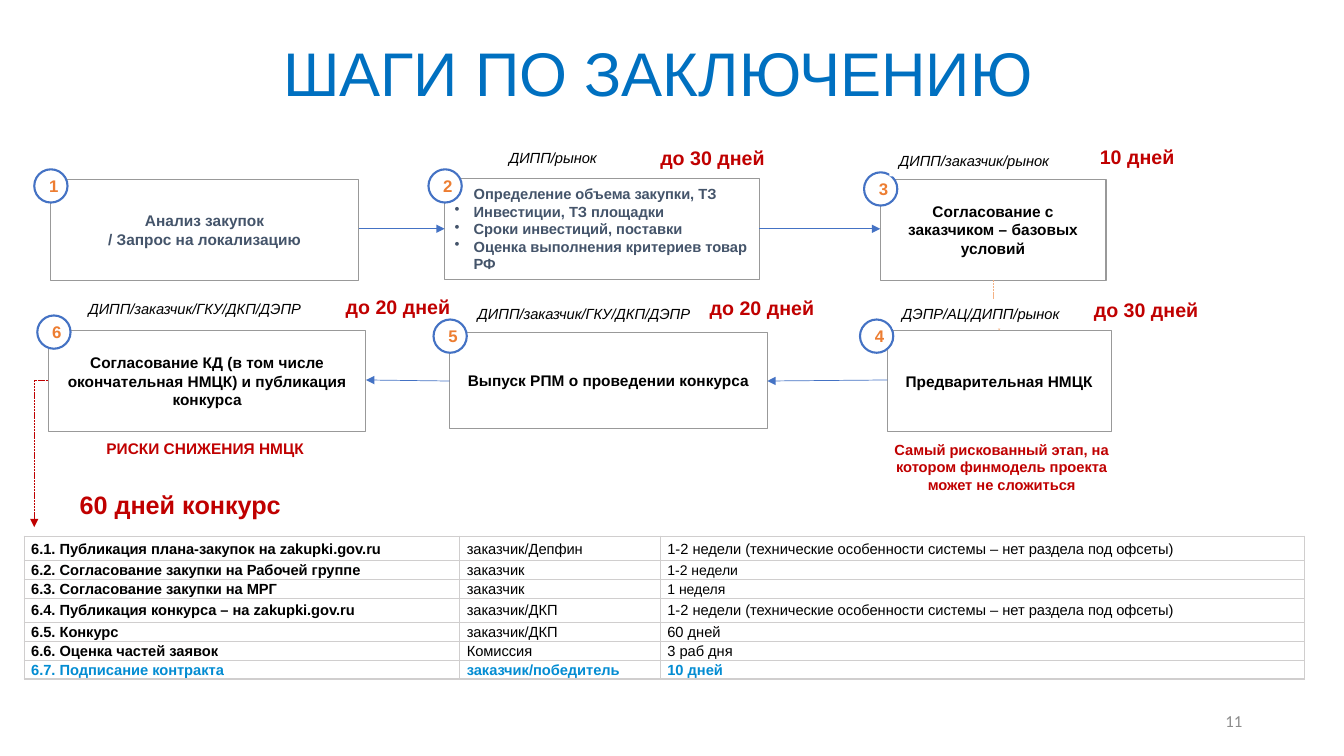
from pptx import Presentation, util as u
from pptx.dml.color import RGBColor
from pptx.enum import dml, shapes, text
from pptx.oxml import parse_xml
from pptx.oxml.ns import nsdecls, qn

HUE = {"white": "FFFFFF", "black": "000000", "slate": "44546A", "edge": "999999",
       "blue": "4472C4", "amber": "ED7D31", "peach": "F4B183", "red": "C00000",
       "title": "0070C0", "sky": "038CD2", "grid": "D0CECE", "page": "8C8C8C"}

# Steps: number, box, circle corner, lines, size, colour
STEPS = [
    (1, (0.5, 1.78, 3.06, 1), (0.34, 1.68),
     ["Анализ закупок", "/ Запрос на локализацию"], 11, "slate"),
    (2, (4.41, 1.77, 3.12, 1), (4.25, 1.68),
     ["Определение объема закупки, ТЗ", "Инвестиции, ТЗ площадки",
      "Сроки инвестиций, поставки", "Оценка выполнения критериев товар РФ"],
     10.5, "slate"),
    (3, (8.73, 1.78, 2.24, 1), (8.57, 1.71),
     ["Согласование с заказчиком – базовых условий"], 11, "black"),
    (4, (8.8, 3.28, 2.22, 1), (8.53, 3.17), ["Предварительная НМЦК"], 11, "black"),
    (5, (4.46, 3.3, 3.15, 0.95), (4.3, 3.17),
     ["Выпуск РПМ о проведении конкурса"], 11, "black"),
    (6, (0.48, 3.28, 3.15, 1), (0.37, 3.13),
     ["Согласование КД (в том числе окончательная НМЦК) и публикация конкурса"],
     11, "black"),
]
BULLETED = 2

# Straight arrows: from, to, width
ARROWS = [
    ((3.56, 2.27), (4.41, 2.27), 1),
    ((7.53, 2.27), (8.73, 2.27), 0.5),
    ((8.8, 3.77), (7.61, 3.78), 0.5),
    ((4.46, 3.78), (3.63, 3.77), 0.5),
]

# Who is in charge: left, top, width, wording
OWNERS = [
    (4.95, 1.43, 2.51, "ДИПП/рынок"),
    (8.82, 1.46, 2.51, "ДИПП/заказчик/рынок"),
    (8.85, 2.97, 2.51, "ДЭПР/АЦ/ДИПП/рынок"),
    (4.64, 2.97, 2.87, "ДИПП/заказчик/ГКУ/ДКП/ДЭПР"),
    (0.78, 2.93, 2.87, "ДИПП/заказчик/ГКУ/ДКП/ДЭПР"),
]

# Red notes: box, wording, size, centred
TERMS = [
    ((0.69, 4.81, 2.32, 0.4), "60 дней конкурс", 18, False),
    ((6.45, 1.4, 2.32, 0.34), "до 30 дней", 14, False),
    ((10.81, 1.39, 2.32, 0.34), "10 дней", 14, False),
    ((10.75, 2.91, 2.32, 0.34), "до 30 дней", 14, False),
    ((6.94, 2.89, 2.32, 0.34), "до 20 дней", 14, False),
    ((3.33, 2.88, 2.32, 0.34), "до 20 дней", 14, False),
    ((8.64, 4.32, 2.59, 0.63),
     "Самый рискованный этап, на котором финмодель проекта может не сложиться",
     10.5, True),
    ((0.74, 4.31, 2.59, 0.29), "РИСКИ СНИЖЕНИЯ НМЦК", 11, True),
]

LONG = "1-2 недели (технические особенности системы – нет раздела под офсеты)"
ROWS = [
    ("6.1. Публикация плана-закупок на zakupki.gov.ru", "заказчик/Депфин", LONG),
    ("6.2. Согласование закупки на Рабочей группе", "заказчик", "1-2 недели"),
    ("6.3. Согласование закупки на МРГ", "заказчик", "1 неделя"),
    ("6.4. Публикация конкурса – на zakupki.gov.ru", "заказчик/ДКП", LONG),
    ("6.5. Конкурс", "заказчик/ДКП", "60 дней"),
    ("6.6. Оценка частей заявок", "Комиссия", "3 раб дня"),
    ("6.7. Подписание контракта", "заказчик/победитель", "10 дней"),
]
COLS = (4.32, 1.99, 6.39)
SMALL = {(1, 2), (2, 2)}

MID, LEFT, RIGHT = text.PP_ALIGN.CENTER, text.PP_ALIGN.LEFT, text.PP_ALIGN.RIGHT
MIDDLE, TOP = text.MSO_ANCHOR.MIDDLE, text.MSO_ANCHOR.TOP

deck = Presentation()
deck.slide_width, deck.slide_height = u.Inches(13.33), u.Inches(7.5)
slide = deck.slides.add_slide(deck.slide_layouts[6])


def rgb(name):
    return RGBColor.from_string(HUE[name])


def write(frame, lines, size, hue, align=MID, anchor=MIDDLE,
          bold=False, slant=False, face="Arial"):
    frame.word_wrap = True
    frame.vertical_anchor = anchor
    for i, line in enumerate(lines):
        para = frame.add_paragraph() if i else frame.paragraphs[0]
        para.text, para.alignment = line, align
        font = para.font
        font.name, font.size, font.color.rgb = face, u.Pt(size), rgb(hue)
        font.bold, font.italic = bold, slant


def label(box, line, size, hue, **style):
    area = slide.shapes.add_textbox(*map(u.Inches, box))
    write(area.text_frame, [line], size, hue, **style)
    return area


def block(kind, box, edge=None, width=0.75):
    part = slide.shapes.add_shape(kind, *map(u.Inches, box))
    part.shadow.inherit = False
    part.fill.solid()
    part.fill.fore_color.rgb = rgb("white")
    if edge:
        part.line.color.rgb, part.line.width = rgb(edge), u.Pt(width)
    else:
        part.line.fill.background()
    return part


def arrow(start, end, hue, width=0.5, bent=False):
    kind = shapes.MSO_CONNECTOR.ELBOW if bent else shapes.MSO_CONNECTOR.STRAIGHT
    link = slide.shapes.add_connector(kind, *map(u.Inches, start + end))
    link.line.color.rgb, link.line.width = rgb(hue), u.Pt(width)
    if bent:
        link.line.dash_style = dml.MSO_LINE.SQUARE_DOT
    props = link._element.spPr
    props.find(qn("a:ln")).append(
        parse_xml(f'<a:tailEnd {nsdecls("a")} type="triangle"/>'))
    props.append(parse_xml(f'<a:effectLst {nsdecls("a")}/>'))
    return props


# Page number
label((9.42, 6.95, 3, 0.4), "11", 12, "page", align=RIGHT, face="Calibri")

# Table of stage 6
table = slide.shapes.add_table(len(ROWS), len(COLS), u.Inches(0.24), u.Inches(5.32),
                               u.Inches(sum(COLS)), u.Inches(1.34)).table
for col, width in zip(table.columns, COLS):
    col.width = u.Inches(width)
for r, row in enumerate(ROWS):
    table.rows[r].height = u.Inches(0.24 if LONG in row else 0.17)
    last = r == len(ROWS) - 1
    for c, line in enumerate(row):
        cell = table.cell(r, c)
        cell.margin_left = cell.margin_right = u.Inches(0.07)
        cell.margin_top = cell.margin_bottom = 0
        write(cell.text_frame, [line], 10 if (r, c) in SMALL else 10.5,
              "sky" if last else "black", LEFT, bold=last or c == 0)
        cell.vertical_anchor = MIDDLE
        para = cell.text_frame.paragraphs[0]
        para.line_spacing, para.space_after = 1.07, u.Pt(8)
        props = cell._tc.get_or_add_tcPr()
        for side in ("lnL", "lnR", "lnT", "lnB"):
            props.append(parse_xml(
                f'<a:{side} {nsdecls("a")} w="12700"><a:solidFill>'
                f'<a:srgbClr val="{HUE["grid"]}"/></a:solidFill></a:{side}>'))
        cell.fill.background()

# Step boxes
for num, box, _, lines, size, hue in STEPS:
    part = block(shapes.MSO_SHAPE.RECTANGLE, box, "edge")
    listed = num == BULLETED
    write(part.text_frame, lines, size, hue, LEFT if listed else MID, bold=True)
    if listed:
        for para in part.text_frame.paragraphs:
            props = para._p.get_or_add_pPr()
            props.set("marL", str(u.Inches(0.19)))
            props.set("indent", str(-u.Inches(0.19)))
            props.insert(0, parse_xml(f'<a:buChar {nsdecls("a")} char="•"/>'))

# Arrows; the two elbows run from step 3 to 4 and from step 6 to the table
for start, end, width in ARROWS:
    arrow(start, end, "blue", width)
turn = arrow((10.13, 3), (9.63, 3.06), "peach", bent=True)
turn.find(qn("a:xfrm")).set("rot", "16200000")
drop = arrow((0.48, 3.77), (0.34, 5.23), "red", bent=True)
drop.find(qn("a:prstGeom")).set("prst", "bentConnector2")

# Step numbers
for num, _, spot, *_ in STEPS:
    disc = block(shapes.MSO_SHAPE.OVAL, spot + (0.33, 0.33), "blue", 1.5)
    write(disc.text_frame, [str(num)], 12, "amber", bold=True)

# Owners, terms and title
for left, top, width, line in OWNERS:
    part = block(shapes.MSO_SHAPE.RECTANGLE, (left, top, width, 0.29))
    write(part.text_frame, [line], 10.5, "black", LEFT, TOP, slant=True)
for box, line, size, mid in TERMS:
    label(box, line, size, "red", align=MID if mid else LEFT, anchor=TOP, bold=True)
head = label((0.78, 0.03, 11.5, 1.45), "ШАГИ ПО ЗАКЛЮЧЕНИЮ", 44, "title")
head.text_frame.paragraphs[0].line_spacing = 0.9

deck.save("out.pptx")
